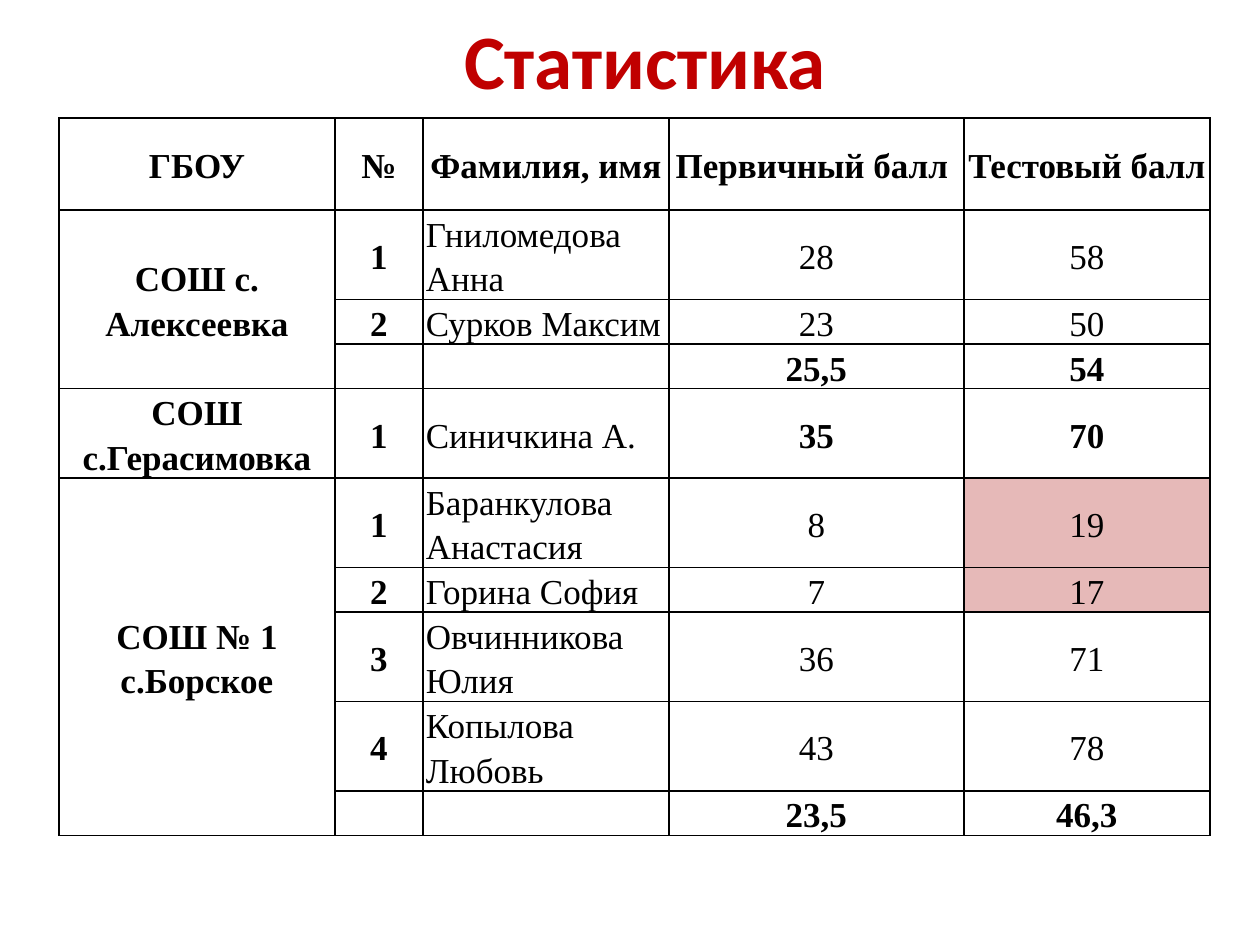
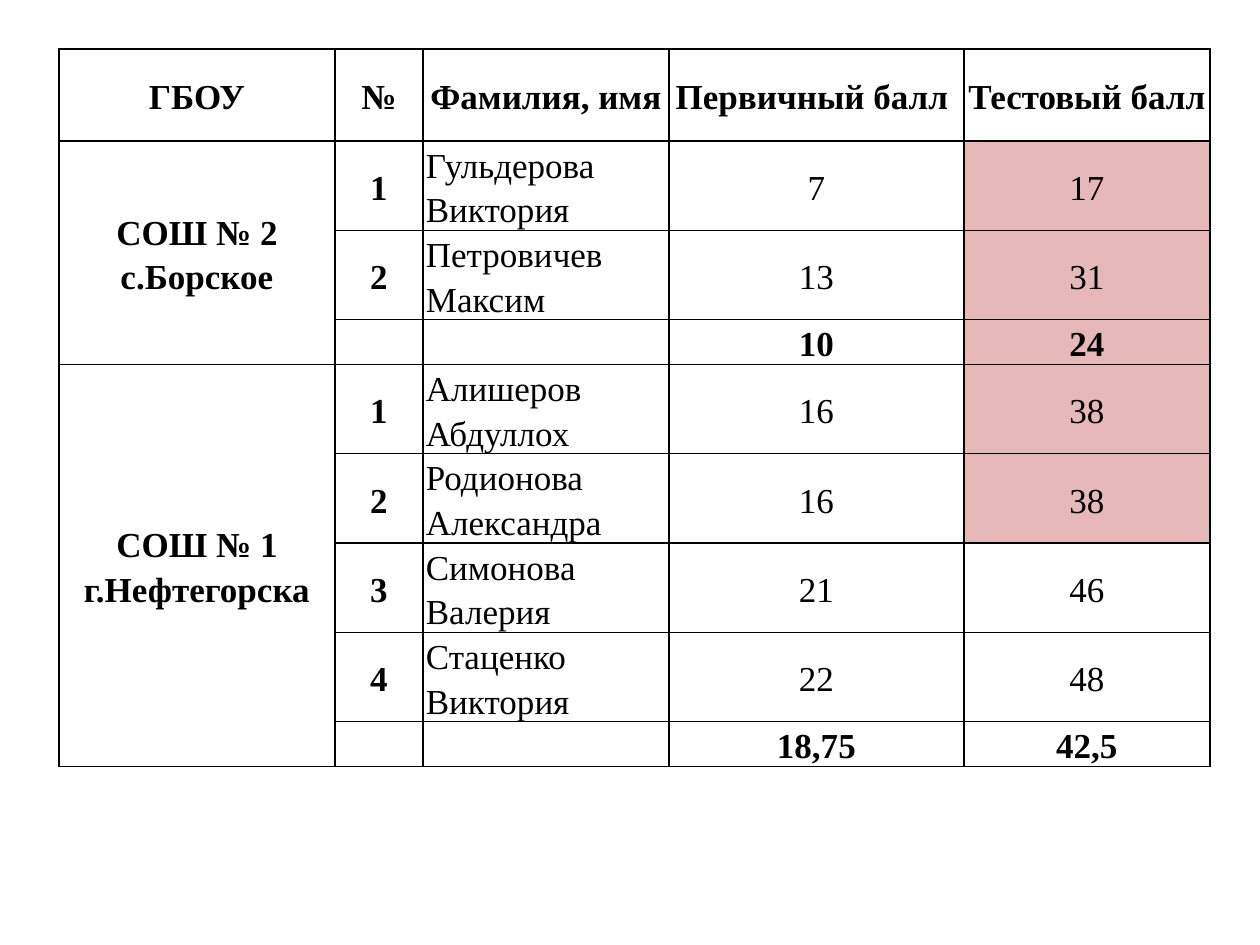
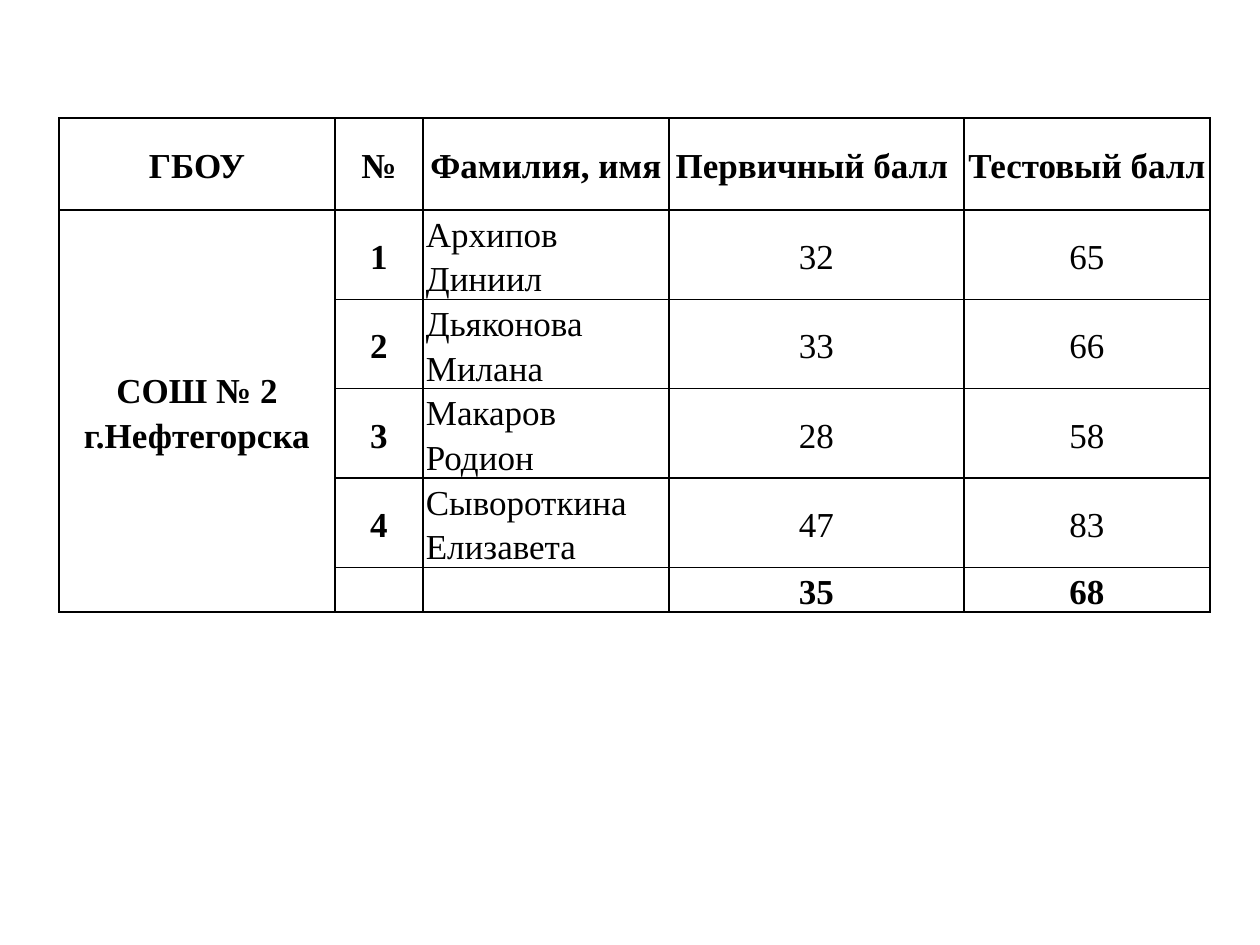
import dataclasses

import lxml.etree
import pptx
import pptx.dml.color
import pptx.enum.text
import pptx.oxml.ns
import pptx.util

RGB = pptx.dml.color.RGBColor
ALIGN = pptx.enum.text.PP_ALIGN
MIDDLE = pptx.enum.text.MSO_ANCHOR.MIDDLE
qn = pptx.oxml.ns.qn

HEADER = ["ГБОУ", "№", "Фамилия, имя", "Первичный балл ", "Тестовый балл"]
COLUMNS = [276, 88, 246, 295, 246]
TABLE_LEFT = 59
HEADER_HEIGHT = 92
LINE_HEIGHT = 44
TWO_LINE_HEIGHT = 89
LONGEST_ONE_LINE_NAME = 13
PASSING_SCORE = 40


@dataclasses.dataclass(frozen=True)
class Theme:
    """Colours, fonts and type sizes of the deck."""

    title_color: str = "C00000"
    text_color: str = "000000"
    line_color: str = "000000"
    low_color: str = "E6B9B8"
    title_font: str = "Calibri"
    table_font: str = "Times New Roman"
    title_size: int = 44
    table_size: int = 20
    line_width: int = 1
    line_spacing: float = 1.15


@dataclasses.dataclass(frozen=True)
class School:
    """One school with its pupils' scores and their average."""

    name: str
    pupils: list
    average: tuple = ()

    def rows(self):
        """Return number, name, scores and score weight for each table row."""
        single = len(self.pupils) == 1
        rows = [(str(i), *pupil, single) for i, pupil in enumerate(self.pupils, 1)]
        return rows + ([("", "", *self.average, True)] if self.average else [])

    def heights(self):
        """Return the height of each table row."""
        rows = self.rows()
        return [TWO_LINE_HEIGHT if len(row[1]) > LONGEST_ONE_LINE_NAME or len(rows) == 1
                else LINE_HEIGHT for row in rows]


class Deck:
    """Builds slides in one style."""

    def __init__(self, theme, width, height):
        """Start a presentation of the given size."""
        self.theme = theme
        self.prs = pptx.Presentation()
        self.prs.slide_width = self.px(width)
        self.prs.slide_height = self.px(height)
        self.s = None

    def px(self, n):
        """Turn px into EMU."""
        return pptx.util.Emu(round(n * 914400 / 126))

    def slide(self, title=None):
        """Add a slide, with a title where one is given."""
        self.s = self.prs.slides.add_slide(self.prs.slide_layouts[5 if title else 6])
        if title:
            self.title(title, 78, 0, 1134, 118)

    def run(self, p, text, font, size, color, bold):
        """Add a formatted run."""
        r = p.add_run()
        r.text = text
        r.font.name = font
        r.font.size = pptx.util.Pt(size)
        r.font.color.rgb = RGB.from_string(color)
        r.font.bold = bold

    def title(self, text, x, y, w, h):
        """Place and fill the title placeholder."""
        sp, t = self.s.shapes.title, self.theme
        sp.left, sp.top, sp.width, sp.height = map(self.px, (x, y, w, h))
        tf = sp.text_frame
        tf.vertical_anchor = MIDDLE
        p = tf.paragraphs[0]
        p.alignment = ALIGN.CENTER
        self.run(p, text, t.title_font, t.title_size, t.title_color, True)

    def border(self, cell):
        """Draw the four borders of a cell."""
        t = self.theme
        for side in ("a:lnL", "a:lnR", "a:lnT", "a:lnB"):
            ln = lxml.etree.SubElement(cell._tc.get_or_add_tcPr(), qn(side),
                                       w=str(pptx.util.Pt(t.line_width)))
            fill = lxml.etree.SubElement(ln, qn("a:solidFill"))
            lxml.etree.SubElement(fill, qn("a:srgbClr"), val=t.line_color)

    def cell(self, cell, text="", bold=False, align=ALIGN.CENTER, low=False):
        """Format and fill one table cell."""
        t = self.theme
        cell.margin_left = cell.margin_right = self.px(3)
        cell.margin_top = cell.margin_bottom = 0
        cell.vertical_anchor = MIDDLE
        self.border(cell)
        if low:
            cell.fill.solid()
            cell.fill.fore_color.rgb = RGB.from_string(t.low_color)
        else:
            cell.fill.background()
        p = cell.text_frame.paragraphs[0]
        p.alignment = align
        p.line_spacing = t.line_spacing
        if text:
            self.run(p, text, t.table_font, t.table_size, t.text_color, bold)
        else:
            lxml.etree.SubElement(p._p, qn("a:endParaRPr"), sz=str(t.table_size * 100))

    def table(self, top, schools):
        """Add the score table of the given schools."""
        heights = [HEADER_HEIGHT] + [h for school in schools for h in school.heights()]
        frame = self.s.shapes.add_table(
            len(heights), len(COLUMNS), self.px(TABLE_LEFT), self.px(top),
            self.px(sum(COLUMNS)), self.px(sum(heights)))
        tbl = frame.table
        tbl.first_row = tbl.horz_banding = False
        for column, width in zip(tbl.columns, COLUMNS):
            column.width = self.px(width)
        for row, height in zip(tbl.rows, heights):
            row.height = self.px(height)
        for c, text in enumerate(HEADER):
            self.cell(tbl.cell(0, c), text, bold=True)
        first = 1
        for school in schools:
            rows = school.rows()
            if len(rows) > 1:
                tbl.cell(first, 0).merge(tbl.cell(first + len(rows) - 1, 0))
            for i, (number, name, primary, test, bold) in enumerate(rows, first):
                self.cell(tbl.cell(i, 0), school.name if i == first else "", bold=True)
                self.cell(tbl.cell(i, 1), number, bold=True)
                self.cell(tbl.cell(i, 2), name, align=ALIGN.LEFT)
                self.cell(tbl.cell(i, 3), primary, bold)
                low = float(test.replace(",", ".")) < PASSING_SCORE
                self.cell(tbl.cell(i, 4), test, bold, low=low)
            first += len(rows)


def main():
    """Build and save the deck."""
    deck = Deck(Theme(), 1260, 945)

    deck.slide("Статистика")
    deck.table(118, [
        School("СОШ с. Алексеевка", [
            ("Гниломедова Анна", "28", "58"),
            ("Сурков Максим", "23", "50"),
        ], ("25,5", "54")),
        School("СОШ с.Герасимовка", [("Синичкина А.", "35", "70")]),
        School("СОШ № 1 с.Борское", [
            ("Баранкулова Анастасия", "8", "19"),
            ("Горина София", "7", "17"),
            ("Овчинникова Юлия", "36", "71"),
            ("Копылова Любовь", "43", "78"),
        ], ("23,5", "46,3")),
    ])

    deck.slide()
    deck.table(49, [
        School("СОШ № 2 с.Борское", [
            ("Гульдерова Виктория", "7", "17"),
            ("Петровичев Максим", "13", "31"),
        ], ("10", "24")),
        School("СОШ № 1 г.Нефтегорска", [
            ("Алишеров Абдуллох", "16", "38"),
            ("Родионова Александра", "16", "38"),
            ("Симонова Валерия", "21", "46"),
            ("Стаценко Виктория", "22", "48"),
        ], ("18,75", "42,5")),
    ])

    deck.slide()
    deck.table(118, [
        School("СОШ № 2 г.Нефтегорска", [
            ("Архипов Диниил", "32", "65"),
            ("Дьяконова Милана", "33", "66"),
            ("Макаров Родион", "28", "58"),
            ("Сывороткина Елизавета", "47", "83"),
        ], ("35", "68")),
    ])

    deck.prs.save("out.pptx")


if __name__ == "__main__":
    main()
